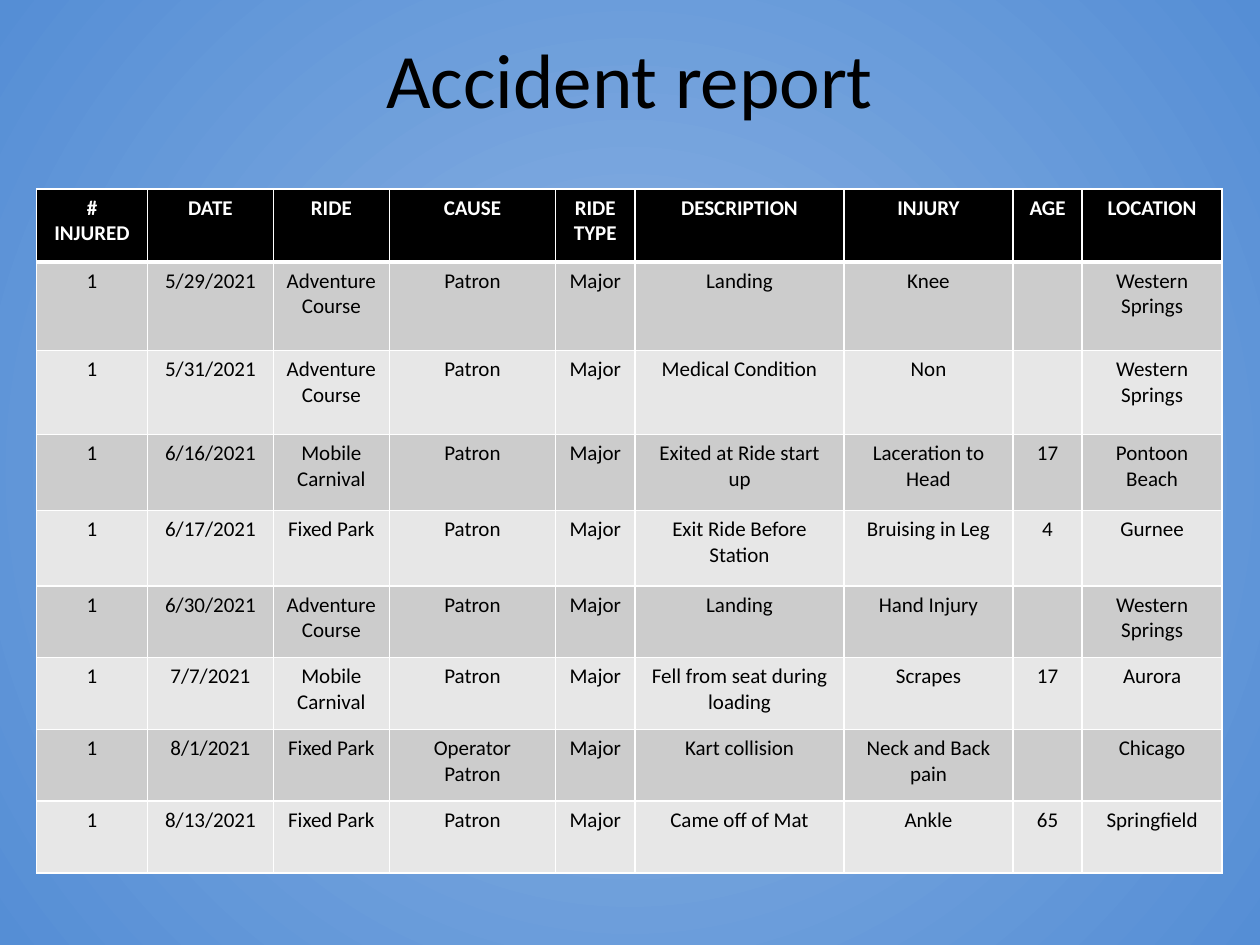
from pptx import Presentation
from pptx.dml.color import RGBColor
from pptx.enum.text import MSO_ANCHOR, PP_ALIGN
from pptx.oxml import parse_xml
from pptx.oxml.ns import nsdecls, qn
from pptx.util import Inches, Pt

CENTER = PP_ALIGN.CENTER
MIDDLE = MSO_ANCHOR.MIDDLE
FONT = "Calibri"
BLACK, WHITE = "000000", "FFFFFF"
BANDS = ("CCCCCC", "E7E7E7")
WIDTHS = (0.88, 1, 0.92, 1.32, 0.63, 1.66, 1.34, 0.55, 1.11)
HEIGHTS = (0.58, 0.7, 0.67, 0.6, 0.6, 0.57, 0.57, 0.57, 0.57)
HEADS = ("# INJURED", "DATE", "RIDE", "CAUSE", "RIDE TYPE",
         "DESCRIPTION", "INJURY", "AGE", "LOCATION")
# date, ride, cause, description, injury, age, location
CASES = (
    ("5/29/2021", "Adventure Course", "Patron", "Landing", "Knee", "",
     "Western Springs"),
    ("5/31/2021", "Adventure Course", "Patron", "Medical Condition", "Non", "",
     "Western Springs"),
    ("6/16/2021", "Mobile Carnival", "Patron", "Exited at Ride start up",
     "Laceration to Head", "17", "Pontoon Beach"),
    ("6/17/2021", "Fixed Park", "Patron", "Exit Ride Before Station",
     "Bruising in Leg", "4", "Gurnee"),
    ("6/30/2021", "Adventure Course", "Patron", "Landing", "Hand Injury", "",
     "Western Springs"),
    ("7/7/2021", "Mobile Carnival", "Patron", "Fell from seat during loading",
     "Scrapes", "17", "Aurora"),
    ("8/1/2021", "Fixed Park", "Operator\nPatron", "Kart collision",
     "Neck and Back pain", "", "Chicago"),
    ("8/13/2021", "Fixed Park", "Patron", "Came off of Mat", "Ankle", "65",
     "Springfield"),
)


def rgb(code):
    return RGBColor.from_string(code)


def set_text(frame, text, size, color, bold=False):
    frame.text = text
    for para in frame.paragraphs:
        para.alignment = CENTER
        para.font.size = Pt(size)
        for run in para.runs:
            font = run.font
            font.name, font.size, font.bold = FONT, Pt(size), bold
            font.color.rgb = rgb(color)


def set_back(slide, inner, outer):
    """Fill the background with a gradient that spreads from the centre."""
    fill = slide.background.fill
    fill.gradient()
    for stop, color in zip(fill.gradient_stops, (inner, outer)):
        stop.color.rgb = rgb(color)
    line = slide.element.find(".//" + qn("a:lin"))
    line.getparent().replace(line, parse_xml(
        f'<a:path {nsdecls("a")} path="circle"><a:fillToRect '
        'l="50000" t="50000" r="50000" b="50000"/></a:path>'))


def set_edges(cell, top, bottom):
    """Draw white borders; top and bottom are widths in points."""
    props = cell._tc.get_or_add_tcPr()
    edges = (("L", 1), ("R", 1), ("T", top), ("B", bottom))
    for place, (side, width) in enumerate(edges):
        props.insert(place, parse_xml(
            f'<a:ln{side} {nsdecls("a")} w="{Pt(width)}"><a:solidFill>'
            f'<a:srgbClr val="{WHITE}"/></a:solidFill></a:ln{side}>'))


def set_cell(cell, text, row):
    head = row == 0
    set_text(cell.text_frame, text, 12, WHITE if head else BLACK, head)
    cell.fill.solid()
    cell.fill.fore_color.rgb = rgb(BLACK if head else BANDS[(row - 1) % 2])
    set_edges(cell, 3 if row == 1 else 1, 3 if head else 1)


def add_title(slide, text):
    title = slide.shapes.title
    title.left, title.top = Inches(0.5), Inches(0.08)
    title.width, title.height = Inches(9), Inches(1.08)
    set_text(title.text_frame, text, 44, BLACK)
    title.text_frame.vertical_anchor = MIDDLE


def add_grid(slide, rows):
    table = slide.shapes.add_table(
        len(rows), len(WIDTHS), Inches(0.29), Inches(1.5),
        Inches(sum(WIDTHS)), Inches(sum(HEIGHTS))).table
    for col, width in zip(table.columns, WIDTHS):
        col.width = Inches(width)
    for line, height in zip(table.rows, HEIGHTS):
        line.height = Inches(height)
    for r, row in enumerate(rows):
        for c, text in enumerate(row):
            set_cell(table.cell(r, c), text, r)


def main():
    deck = Presentation()
    deck.slide_width, deck.slide_height = Inches(10), Inches(7.5)
    slide = deck.slides.add_slide(deck.slide_layouts[5])
    set_back(slide, "8EB4E3", "558ED5")
    add_title(slide, "Accident report")
    rows = [("1", *case[:3], "Major", *case[3:]) for case in CASES]
    add_grid(slide, [HEADS, *rows])
    deck.save("out.pptx")


if __name__ == "__main__":
    main()
